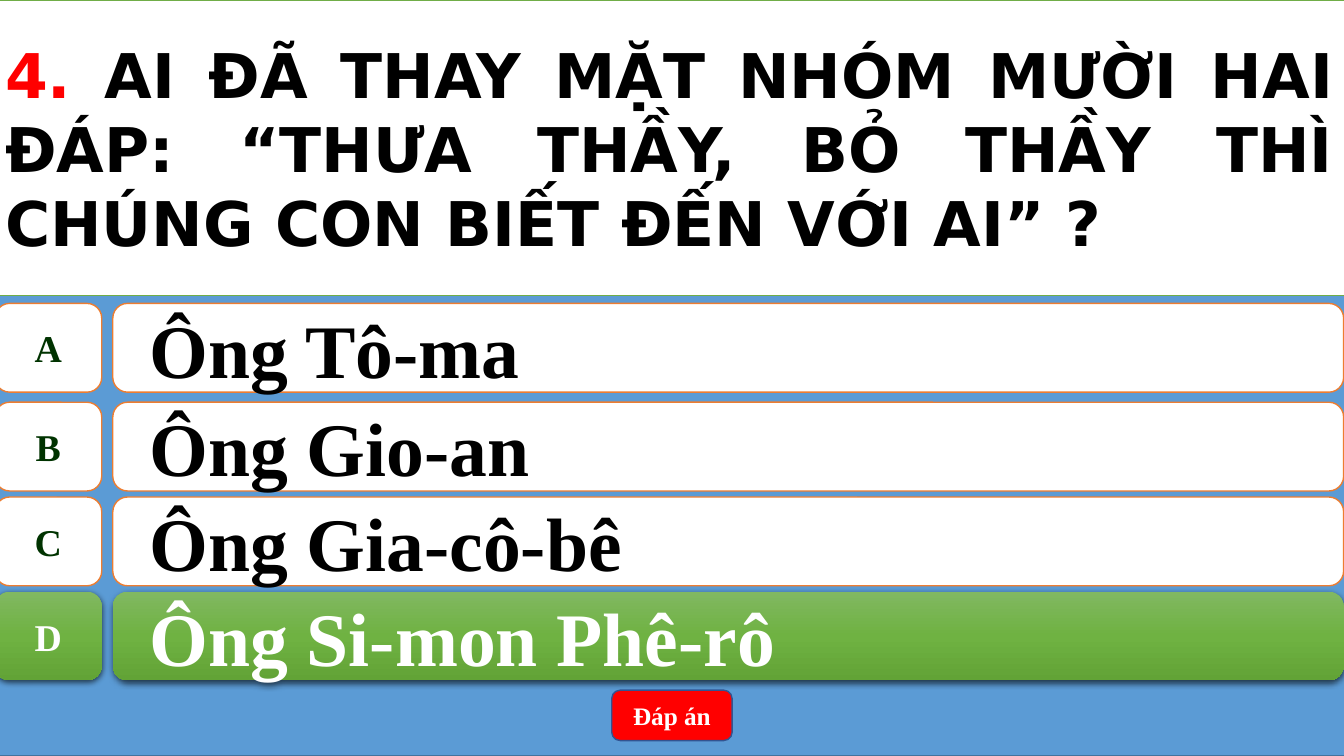
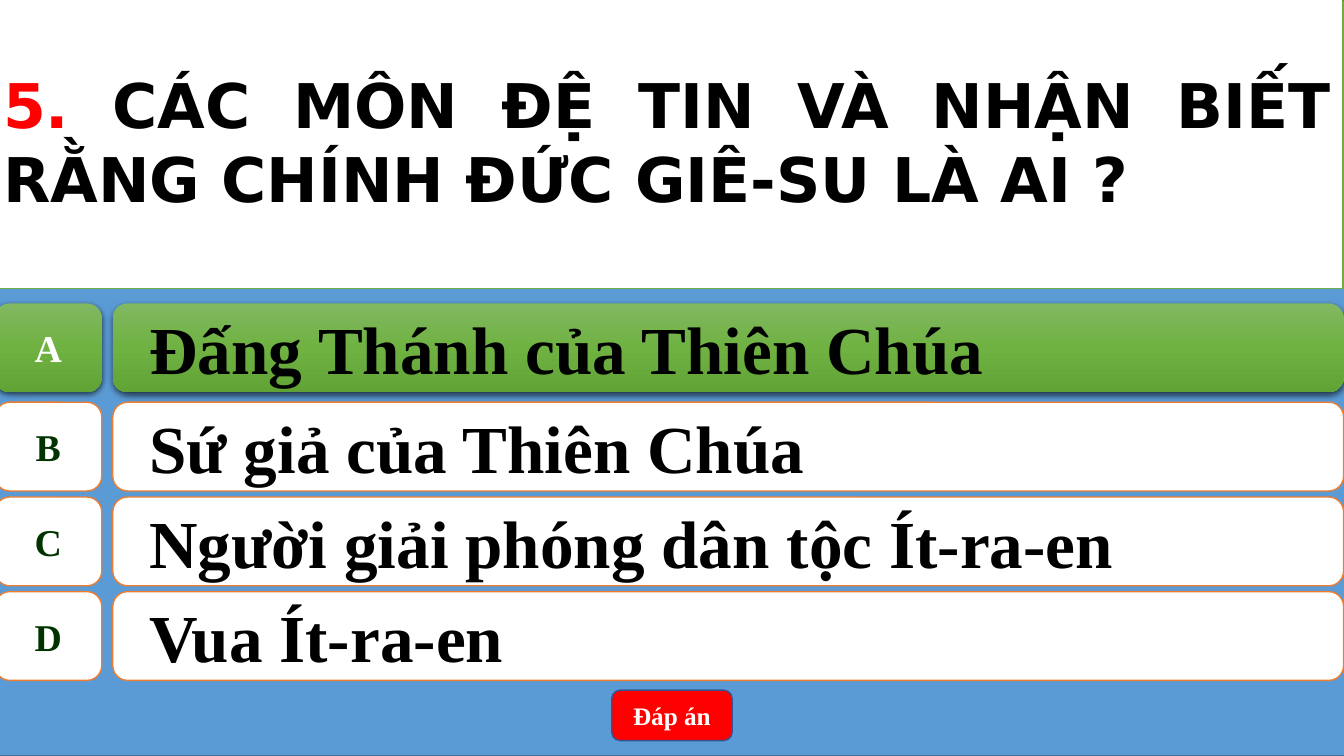
from pptx import Presentation
from pptx.dml.color import RGBColor
from pptx.enum.shapes import MSO_SHAPE
from pptx.enum.text import MSO_ANCHOR, MSO_AUTO_SIZE, PP_ALIGN
from pptx.oxml import parse_xml
from pptx.oxml.ns import nsdecls, qn
from pptx.util import Pt

COLORS = {
    "white": "FFFFFF", "black": "000000", "red": "FF0000",
    "blue": "5B9BD5", "blue_line": "43739E", "button_line": "325491",
    "orange": "ED7D31", "green_line": "70AD47", "letter": "003300",
    "green_top": "81B861", "green_mid": "6FB242", "green_bottom": "62A336",
}
SERIF, SANS = "Times New Roman", "DejaVu Sans"
WIDTH, HEIGHT = 960, 540
LEFT, FULL_WIDTH = -3.6, 964
ROW_TOPS, ROW_HEIGHT = (216.7, 287.3, 355, 422.6), 63.4
LETTER_WIDTH, ANSWER_OFFSET = 76.3, 84.2
QUESTIONS = [
    {"box": (LEFT, 0, FULL_WIDTH, 211), "number": "4. ",
     "text": "AI ĐÃ THAY MẶT NHÓM MƯỜI HAI ĐÁP: “THƯA THẦY, BỎ THẦY THÌ "
             "CHÚNG CON BIẾT ĐẾN VỚI AI” ?",
     "answers": ["Ông Tô-ma", "Ông Gio-an", "Ông Gia-cô-bê", "Ông Si-mon Phê-rô"],
     "size": 54, "correct": "D", "correct_color": "white"},
    {"box": (-5, -5, FULL_WIDTH, 211), "number": "5. ",
     "text": "CÁC MÔN ĐỆ TIN VÀ NHẬN BIẾT RẰNG CHÍNH ĐỨC GIÊ-SU LÀ AI ?",
     "answers": ["Đấng Thánh của Thiên Chúa", "Sứ giả của Thiên Chúa",
                 "Người giải phóng dân tộc Ít-ra-en", "Vua Ít-ra-en"],
     "size": 48, "correct": "A", "correct_color": "black"},
]


def rgb(name):
    """Return the palette colour of this name."""
    return RGBColor.from_string(COLORS[name])


def paint(sp, fill, line):
    """Give a shape a plain fill and a one-point outline."""
    sp.fill.solid()
    sp.fill.fore_color.rgb = rgb(fill)
    sp.line.color.rgb = rgb(line)
    sp.line.width = Pt(1)


def paint_correct(sp):
    """Give a shape the green gradient and soft shadow of the right answer."""
    sp.line.fill.background()
    stops = "".join(
        f'<a:gs pos="{pos}"><a:srgbClr val="{COLORS[name]}"/></a:gs>'
        for pos, name in ((0, "green_top"), (50000, "green_mid"), (100000, "green_bottom")))
    spPr = sp.element.spPr
    spPr.insert(2, parse_xml(
        f'<a:gradFill {nsdecls("a")} rotWithShape="1"><a:gsLst>{stops}</a:gsLst>'
        '<a:lin ang="5400000" scaled="0"/></a:gradFill>'))
    spPr.find(qn("a:effectLst")).append(parse_xml(
        f'<a:outerShdw {nsdecls("a")} blurRad="{Pt(4.5)}" dist="{Pt(1.5)}" dir="5400000" '
        f'algn="ctr" rotWithShape="0"><a:srgbClr val="{COLORS["black"]}">'
        '<a:alpha val="63000"/></a:srgbClr></a:outerShdw>'))


def add_box(shapes, kind, box):
    """Add a shadowless preset shape."""
    sp = shapes.add_shape(kind, *map(Pt, box))
    sp.shadow.inherit = False
    return sp


def add_run(p, text, size, color, font=SERIF):
    """Add one bold run."""
    r = p.add_run()
    r.text = text
    r.font.name, r.font.size, r.font.bold = font, Pt(size), True
    r.font.color.rgb = rgb(color)


def start_text(sp, align, wrap=True):
    """Centre the text vertically and return its first paragraph."""
    tf = sp.text_frame
    tf.word_wrap = wrap
    tf.auto_size = MSO_AUTO_SIZE.NONE
    tf.vertical_anchor = MSO_ANCHOR.MIDDLE
    p = tf.paragraphs[0]
    p.alignment = align
    return p


def add_backdrop(slide):
    """Place the blue panel behind everything."""
    sp = add_box(slide.shapes, MSO_SHAPE.RECTANGLE, (LEFT, 0, FULL_WIDTH, HEIGHT))
    paint(sp, "blue", "blue_line")


def add_question(slide, box, number, text):
    """Format the title as the white question panel in front."""
    sp = slide.shapes.title
    sp.left, sp.top, sp.width, sp.height = map(Pt, box)
    paint(sp, "white", "green_line")
    p = start_text(sp, PP_ALIGN.JUSTIFY)
    p.line_spacing = 1.0
    add_run(p, number, 44, "red", SANS)
    add_run(p, text, 44, "black", SANS)
    slide.shapes.element.append(sp.element)


def add_answer(slide, box, letter, text, size, correct_color=None):
    """Place a letter tile and its answer bar as a group."""
    left, top, width, height = box
    shapes = slide.shapes.add_group_shape().shapes
    tile = add_box(shapes, MSO_SHAPE.FLOWCHART_ALTERNATE_PROCESS,
                   (left, top, LETTER_WIDTH, height))
    bar = add_box(shapes, MSO_SHAPE.ROUNDED_RECTANGLE,
                  (left + ANSWER_OFFSET, top, width - ANSWER_OFFSET, height))
    for sp in (tile, bar):
        if correct_color:
            paint_correct(sp)
        else:
            paint(sp, "white", "orange")
    p = start_text(tile, PP_ALIGN.CENTER, wrap=False)
    add_run(p, letter, 27, "white" if correct_color else "letter")
    p = start_text(bar, PP_ALIGN.LEFT)
    p.level = 1
    pPr = p._p.get_or_add_pPr()
    pPr.set("marL", str(Pt(36)))
    pPr.set("indent", str(Pt(-20)))
    add_run(p, text, size, correct_color or "black")


def add_button(slide, box):
    """Place the red answer button."""
    sp = add_box(slide.shapes, MSO_SHAPE.ROUNDED_RECTANGLE, box)
    paint(sp, "red", "button_line")
    add_run(start_text(sp, PP_ALIGN.CENTER), "Đáp án", 18, "white")


def add_quiz_slide(prs, question):
    """Build one multiple-choice slide."""
    slide = prs.slides.add_slide(prs.slide_layouts[5])
    add_backdrop(slide)
    for letter, top, text in zip("ABCD", ROW_TOPS, question["answers"]):
        color = question["correct_color"] if letter == question["correct"] else None
        add_answer(slide, (LEFT, top, FULL_WIDTH - 0.6, ROW_HEIGHT),
                   letter, text, question["size"], color)
    add_button(slide, (437, 493, 86, 36))
    add_question(slide, question["box"], question["number"], question["text"])


def main():
    """Build and save the quiz."""
    prs = Presentation()
    prs.slide_width, prs.slide_height = Pt(WIDTH), Pt(HEIGHT)
    for question in QUESTIONS:
        add_quiz_slide(prs, question)
    prs.save("out.pptx")


if __name__ == "__main__":
    main()
